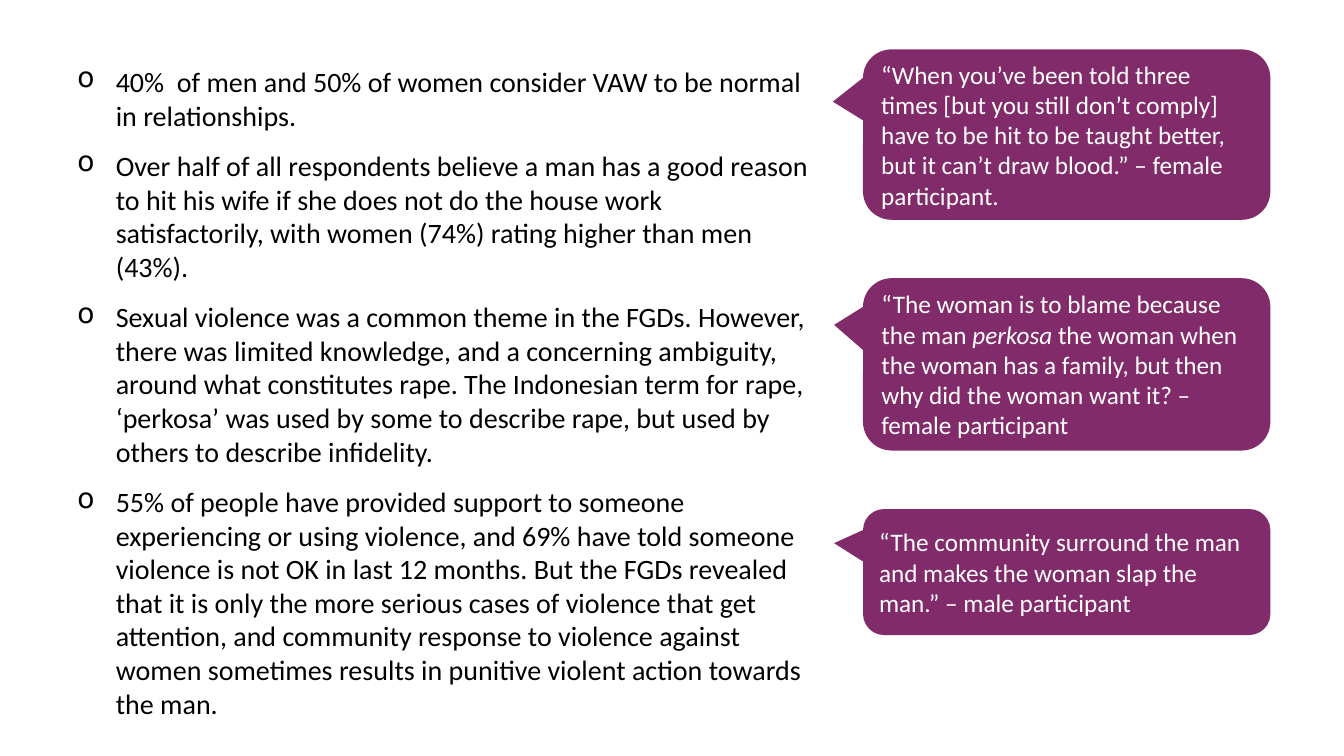
from pptx import Presentation
from pptx.dml.color import RGBColor
from pptx.enum.shapes import MSO_SHAPE
from pptx.enum.text import MSO_ANCHOR, PP_ALIGN
from pptx.oxml.xmlchemy import OxmlElement
from pptx.util import Inches, Pt


def style(paragraph, size, color):
    paragraph.alignment = PP_ALIGN.LEFT
    paragraph.font.name = "Calibri"
    paragraph.font.size = Pt(size)
    paragraph.font.color.rgb = RGBColor.from_string(color)


prs = Presentation()
prs.slide_width, prs.slide_height = Inches(13.33), Inches(7.5)
slide = prs.slides.add_slide(prs.slide_layouts[6])

# Findings on the left
findings = [
    "40%  of men and 50% of women consider VAW to be normal in relationships.",
    "Over half of all respondents believe a man has a good reason to hit his wife "
    "if she does not do the house work satisfactorily, with women (74%) rating "
    "higher than men (43%).",
    "Sexual violence was a common theme in the FGDs. However, there was limited "
    "knowledge, and a concerning ambiguity, around what constitutes rape. The "
    "Indonesian term for rape, ‘perkosa’ was used by some to describe rape, but "
    "used by others to describe infidelity.",
    "55% of people have provided support to someone experiencing or using violence, "
    "and 69% have told someone violence is not OK in last 12 months. But the FGDs "
    "revealed that it is only the more serious cases of violence that get attention, "
    "and community response to violence against women sometimes results in punitive "
    "violent action towards the man.",
]
findings_frame = slide.shapes.add_textbox(
    Inches(0.67), Inches(0.59), Inches(7.48), Inches(6.33)).text_frame
findings_frame.word_wrap = True
for index, finding in enumerate(findings):
    paragraph = findings_frame.add_paragraph() if index else findings_frame.paragraphs[0]
    paragraph.text = finding
    paragraph.space_before = Pt(12)
    style(paragraph, 20, "000000")
    # Hanging round bullet
    properties = paragraph._p.get_or_add_pPr()
    properties.set("marL", str(Inches(0.38)))
    properties.set("indent", str(-Inches(0.38)))
    bullet = OxmlElement("a:buChar")
    bullet.set("char", "o")
    properties.insert_element_before(bullet, "a:tabLst", "a:defRPr", "a:extLst")

# Participant quotes on the right: top, height, pointer tip, (text, italic) parts
quotes = [
    (0.49, 1.69, (-0.574, -0.193), [
        ("“When you’ve been told three times [but you still don’t comply] have to be "
         "hit to be taught better, but it can’t draw blood.” – female participant.", False)]),
    (2.76, 1.71, (-0.571, -0.229), [
        ("“The woman is to blame because the man ", False),
        ("perkosa", True),
        (" the woman when the woman has a family, but then why did the woman want it? "
         "– female participant", False)]),
    (5.05, 1.25, (-0.571, -0.229), [
        ("“The community surround the man and makes the woman slap the man.” "
         "– male participant", False)]),
]
for top, height, tip, parts in quotes:
    callout = slide.shapes.add_shape(
        MSO_SHAPE.ROUNDED_RECTANGULAR_CALLOUT,
        Inches(8.56), Inches(top), Inches(4.04), Inches(height))
    callout.adjustments[0], callout.adjustments[1] = tip
    callout.shadow.inherit = False
    callout.fill.solid()
    callout.fill.fore_color.rgb = RGBColor.from_string("812B6A")
    callout.line.fill.background()
    callout.text_frame.word_wrap = True
    callout.text_frame.vertical_anchor = MSO_ANCHOR.MIDDLE
    quote = callout.text_frame.paragraphs[0]
    style(quote, 18, "FFFFFF")
    for text, italic in parts:
        run = quote.add_run()
        run.text = text
        if italic:
            run.font.italic = True

prs.save("out.pptx")
